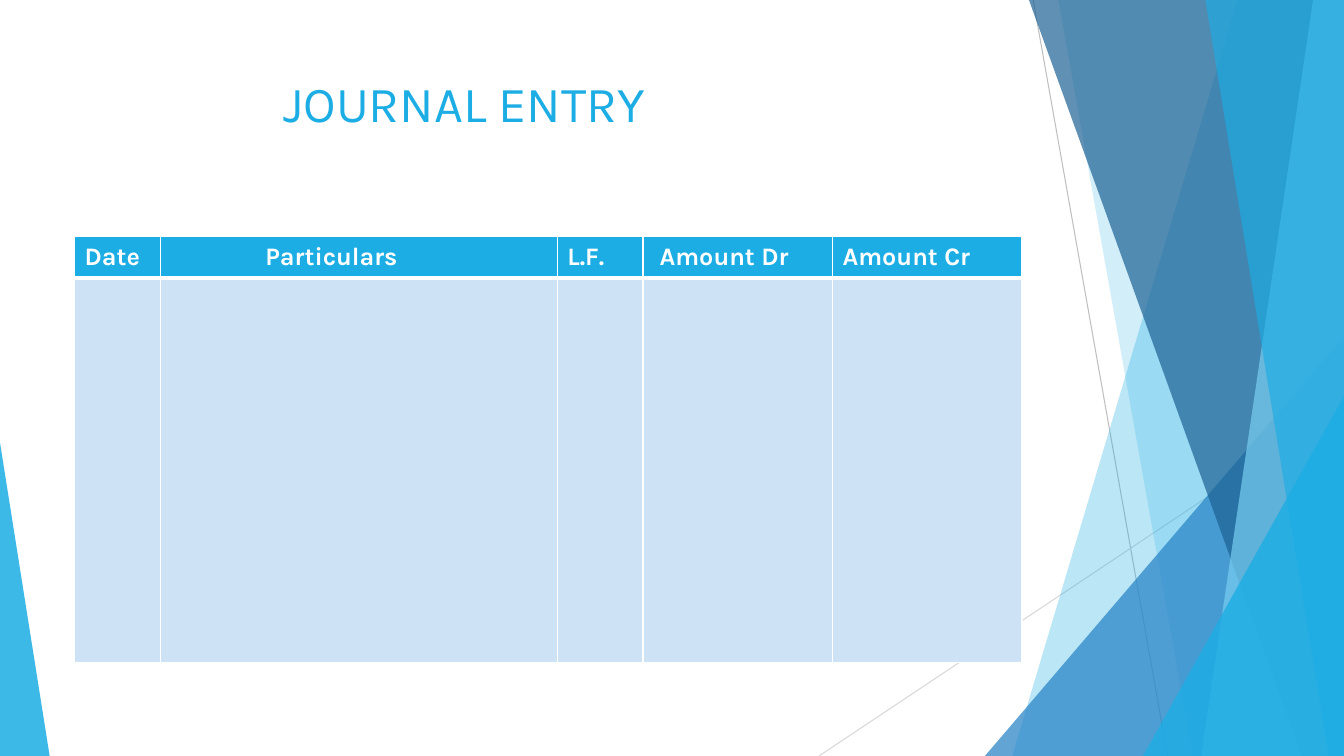
from dataclasses import dataclass

from lxml.etree import SubElement
from pptx import Presentation
from pptx.dml.color import RGBColor
from pptx.enum.shapes import MSO_CONNECTOR, MSO_SHAPE
from pptx.enum.text import MSO_ANCHOR, PP_ALIGN
from pptx.oxml import parse_xml
from pptx.oxml.ns import nsdecls, qn
from pptx.util import Pt


@dataclass(frozen=True)
class Theme:
    font: str = "Karla"
    title_size: int = 36
    table_size: int = 18
    accent: str = "1CADE4"
    blue: str = "2683C6"
    navy: str = "1D6294"
    sky: str = "77CEEF"
    body: str = "CDE3F5"
    white: str = "FFFFFF"
    steep_line: str = "BFBFBF"
    shallow_line: str = "D9D9D9"


THEME = Theme()
WIDTH, HEIGHT = 960, 540

COLUMNS = [
    ("Date", 61.3, 7.2),
    ("Particulars", 283.5, 75),
    ("L.F.", 61.3, 7.2),
    ("Amount Dr", 135.3, 11.8),
    ("Amount Cr", 135.3, 7.2),
]
ROW_HEIGHTS = [29.2, 275]


def write_text(frame, text, *, size, color, bold=False):
    paragraph = frame.paragraphs[0]
    paragraph.alignment = PP_ALIGN.LEFT
    run = paragraph.add_run()
    run.text = text
    run.font.name = THEME.font
    run.font.size = Pt(size)
    run.font.bold = bold
    run.font.color.rgb = RGBColor.from_string(color)


def paint(facet, color, opacity):
    facet.shadow.inherit = False
    facet.fill.solid()
    facet.fill.fore_color.rgb = RGBColor.from_string(color)
    facet.line.fill.background()
    tint = facet.fill._xPr.find(qn("a:solidFill"))[0]
    SubElement(tint, qn("a:alpha"), val=str(opacity * 1000))


def add_band(slide, top_x, bottom_x, color, opacity):
    outline = slide.shapes.build_freeform(top_x, 0, scale=Pt(1))
    outline.add_line_segments([(WIDTH, 0), (WIDTH, HEIGHT), (bottom_x, HEIGHT)])
    paint(outline.convert_to_shape(), color, opacity)


def add_corner(slide, left, top, width, apex, color, opacity):
    corner = slide.shapes.add_shape(
        MSO_SHAPE.ISOSCELES_TRIANGLE, Pt(left), Pt(top), Pt(width), Pt(HEIGHT - top))
    corner.adjustments[0] = apex
    paint(corner, color, opacity)


def add_hairline(slide, start, end, color):
    hairline = slide.shapes.add_connector(
        MSO_CONNECTOR.STRAIGHT, *map(Pt, start), *map(Pt, end))
    hairline.line.color.rgb = RGBColor.from_string(color)
    hairline.line.width = Pt(0.75)
    SubElement(hairline.element.spPr, qn("a:effectLst"))


def add_backdrop(slide):
    add_hairline(slide, (738, 0), (834, HEIGHT), THEME.steep_line)
    add_hairline(slide, (WIDTH, 290), (585, HEIGHT), THEME.shallow_line)
    add_band(slide, 884, 723, THEME.accent, 30)
    add_band(slide, 756, 852, THEME.accent, 20)
    add_corner(slide, 703.5, 240, 256.5, 1, THEME.blue, 72)
    add_band(slide, 735, 929.5, THEME.navy, 70)
    add_band(slide, 938, 858, THEME.sky, 70)
    add_band(slide, 861, 949, THEME.accent, 65)
    add_corner(slide, 816.5, 283, 143.5, 1, THEME.accent, 80)
    add_corner(slide, 0, 316, 35.5, 0, THEME.accent, 85)


def place_title(slide, text):
    title = slide.shapes.title
    title.left, title.top, title.width, title.height = map(Pt, (53.3, 48, 676.8, 104))
    frame = title.text_frame
    frame.word_wrap = True
    frame.vertical_anchor = MSO_ANCHOR.TOP
    frame.margin_left = Pt(149)
    write_text(frame, text, size=THEME.title_size, color=THEME.accent)
    title.element.getparent().append(title.element)


def style_cell(cell, color, top, bottom):
    cell.fill.solid()
    cell.fill.fore_color.rgb = RGBColor.from_string(color)
    properties = cell._tc.get_or_add_tcPr()
    borders = {"lnL": 1, "lnR": 1, "lnT": top, "lnB": bottom}
    for position, (side, weight) in enumerate(borders.items()):
        properties.insert(position, parse_xml(
            f'<a:{side} {nsdecls("a")} w="{Pt(weight)}"><a:solidFill>'
            f'<a:srgbClr val="{THEME.white}"/></a:solidFill></a:{side}>'))


def add_journal(slide):
    total = sum(width for _, width, _ in COLUMNS)
    journal = slide.shapes.add_table(
        len(ROW_HEIGHTS), len(COLUMNS), Pt(53.3), Pt(169.2),
        Pt(total), Pt(sum(ROW_HEIGHTS))).table
    journal.horz_banding = False
    for row, height in zip(journal.rows, ROW_HEIGHTS):
        row.height = Pt(height)
    for index, (heading, width, indent) in enumerate(COLUMNS):
        journal.columns[index].width = Pt(width)
        header = journal.cell(0, index)
        header.margin_left = Pt(indent)
        write_text(header.text_frame, heading, size=THEME.table_size,
                   color=THEME.white, bold=True)
        style_cell(header, THEME.accent, 1, 3)
        style_cell(journal.cell(1, index), THEME.body, 3, 1)


def main():
    deck = Presentation()
    deck.slide_width, deck.slide_height = Pt(WIDTH), Pt(HEIGHT)
    slide = deck.slides.add_slide(deck.slide_layouts[5])
    slide.background.fill.solid()
    slide.background.fill.fore_color.rgb = RGBColor.from_string(THEME.white)
    add_backdrop(slide)
    place_title(slide, "JOURNAL ENTRY")
    add_journal(slide)
    deck.save("out.pptx")


if __name__ == "__main__":
    main()
